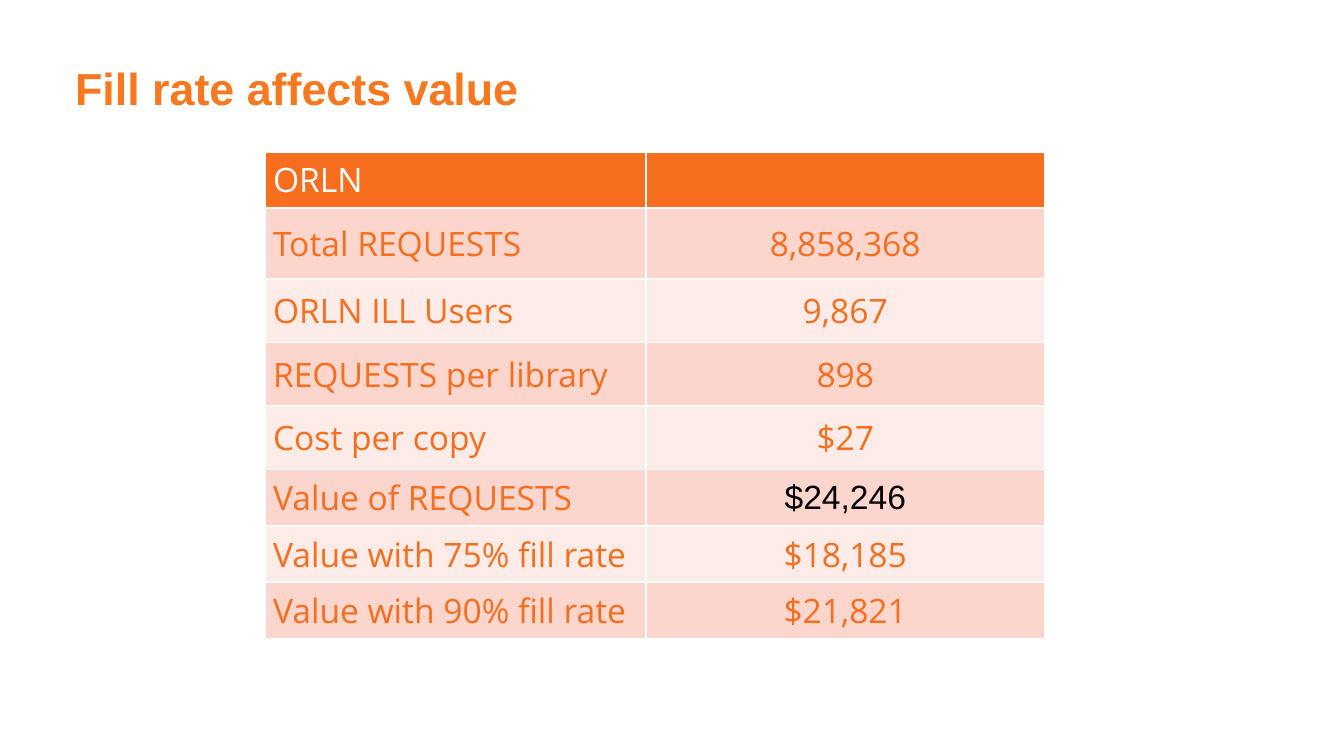
from dataclasses import dataclass

from lxml import etree
from pptx import Presentation
from pptx import util as u
from pptx.dml.color import RGBColor
from pptx.enum import text as t
from pptx.oxml.ns import qn

HUES = {
    "title": "F7781E",
    "main": "F76E1E",
    "dark": "FCD5CD",
    "pale": "FDEBE8",
    "white": "FFFFFF",
    "black": "000000",
}


@dataclass
class Row:
    label: str
    value: str
    high: float  # cm
    font: str = "Open Sans"
    hue: str = "main"


ROWS = [
    Row("ORLN", "", 0.97, hue="white"),
    Row("Total REQUESTS", "8,858,368", 1.34),
    Row("ORLN ILL Users", "9,867", 1.2),
    Row("REQUESTS per library", "898", 1.2),
    Row("Cost per copy", "$27", 1.2),
    Row("Value of REQUESTS", "$24,246", 0.97, "Arial", "black"),
    Row("Value with 75% fill rate", "$18,185", 0.97),
    Row("Value with 90% fill rate", "$21,821", 0.97),
]
WIDTHS = (7.2, 7.53)


def color(name: str) -> RGBColor:
    return RGBColor.from_string(HUES[name])


def write(frame, words: str, *, font: str = "Open Sans", size: int = 18,
          hue: str = "main", bold: bool = False,
          align=t.PP_ALIGN.LEFT, space: float = 1.0) -> None:
    para = frame.paragraphs[0]
    para.alignment = align
    para.line_spacing = space
    para.font.size = u.Pt(size)
    if words:
        run = para.add_run()
        run.text = words
        run.font.name = font
        run.font.size = u.Pt(size)
        run.font.bold = bold
        run.font.color.rgb = color(hue)


def edge(cell, hue: str, wide: float) -> None:
    props = cell._tc.get_or_add_tcPr()
    for side in ("lnL", "lnR", "lnT", "lnB"):
        line = etree.SubElement(props, qn(f"a:{side}"), w=str(u.Pt(wide)))
        fill = etree.SubElement(line, qn("a:solidFill"))
        etree.SubElement(fill, qn("a:srgbClr"), val=HUES[hue])


def paint(cell, words: str, fill: str, **form) -> None:
    cell.margin_left = cell.margin_right = u.Cm(0.15)
    cell.margin_top = cell.margin_bottom = u.Cm(0.1)
    cell.vertical_anchor = t.MSO_ANCHOR.MIDDLE
    edge(cell, "white", 1)
    cell.fill.solid()
    cell.fill.fore_color.rgb = color(fill)
    write(cell.text_frame, words, **form)


def head(slide, words: str) -> None:
    box = slide.shapes.title
    box.left, box.top = u.Cm(1.42), u.Cm(1.3)
    box.width, box.height = u.Cm(22.28), u.Cm(1.83)
    frame = box.text_frame
    frame.margin_left = frame.margin_right = 0
    frame.margin_top = frame.margin_bottom = 0
    frame.vertical_anchor = t.MSO_ANCHOR.TOP
    frame.word_wrap = True
    write(frame, words, font="Arial", size=24, hue="title", bold=True,
          space=0.85)


def grid(slide, rows: list[Row]) -> None:
    high = sum(row.high for row in rows)
    table = slide.shapes.add_table(
        len(rows), len(WIDTHS), u.Cm(5.01), u.Cm(2.87),
        u.Cm(sum(WIDTHS)), u.Cm(high)).table
    table.first_row = table.horz_banding = False
    for col, wide in zip(table.columns, WIDTHS):
        col.width = u.Cm(wide)
    for i, row in enumerate(rows):
        table.rows[i].height = u.Cm(row.high)
        fill = "main" if i == 0 else "dark" if i % 2 else "pale"
        paint(table.cell(i, 0), row.label, fill,
              hue="white" if i == 0 else "main")
        paint(table.cell(i, 1), row.value, fill, font=row.font,
              hue=row.hue, align=t.PP_ALIGN.CENTER)


def main() -> None:
    deck = Presentation()
    deck.slide_width, deck.slide_height = u.Cm(25.4), u.Cm(14.29)
    slide = deck.slides.add_slide(deck.slide_layouts[5])
    # Title
    head(slide, "Fill rate affects value")
    # Table of requests and their value
    grid(slide, ROWS)
    deck.save("out.pptx")


if __name__ == "__main__":
    main()
